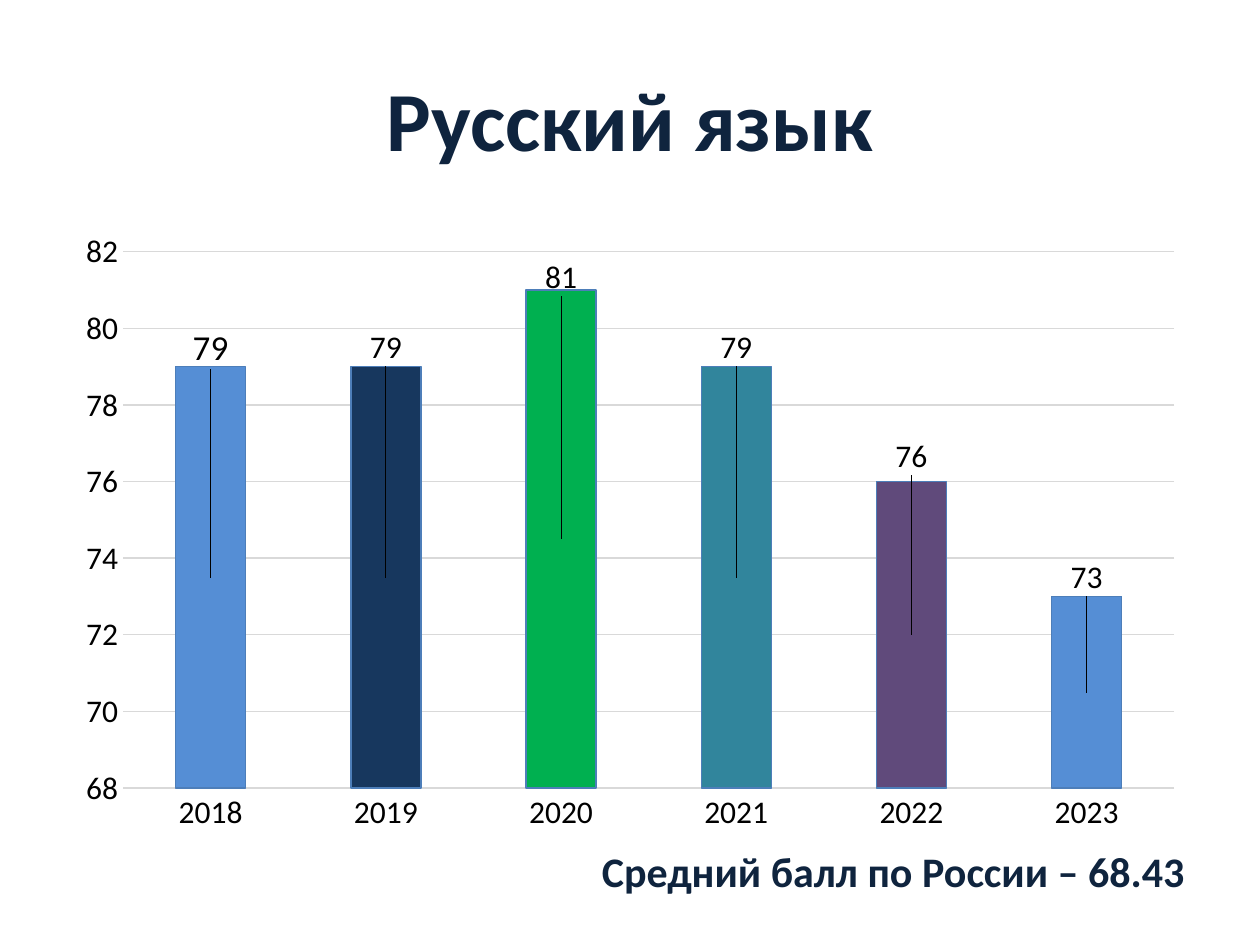
from lxml import etree
from pptx import Presentation, util as u
from pptx.chart.data import CategoryChartData
from pptx.dml.color import RGBColor
from pptx.enum import chart as ch, text
from pptx.oxml import ns

WIDTH, HEIGHT = 10, 7.5
FONT, NAVY, BLACK, GRID, OUTLINE = "Calibri", "0F243E", "000000", "D9D9D9", "4D7EB9"
AXIS_MIN, AXIS_MAX, AXIS_STEP = 68, 82, 2
PLOT = {"x": 0.053, "y": 0.05, "w": 0.927, "h": 0.86}

# year, score, bar colour, label size, gap above the bar as a share of the chart
RESULTS = [
    ("2018", 79, "558ED5", 20, 0.03),
    ("2019", 79, "17375E", 18, 0.03),
    ("2020", 81, "00B050", 18, 0.02),
    ("2021", 79, "31859C", 18, 0.03),
    ("2022", 76, "604A7B", 18, 0.04),
    ("2023", 73, "558ED5", 18, 0.03),
]


def rgb(value):
    return RGBColor.from_string(value)


def apply(target, values):
    for name, value in values.items():
        setattr(target, name, value)


def place(parent, index, values):
    """Give a chart part a manual layout, in shares of the chart."""
    for old in parent.findall(ns.qn("c:layout")):
        parent.remove(old)
    layout = etree.Element(ns.qn("c:layout"))
    manual = etree.SubElement(layout, ns.qn("c:manualLayout"))
    for name, value in values.items():
        etree.SubElement(manual, ns.qn(f"c:{name}"), val=str(value))
    parent.insert(index, layout)


class Deck:
    def __init__(self):
        self.prs = Presentation()
        self.prs.slide_width, self.prs.slide_height = u.Inches(WIDTH), u.Inches(HEIGHT)
        self.slide = self.prs.slides.add_slide(self.prs.slide_layouts[6])

    def box(self, left, top, width, height):
        """Turn shares of the slide into lengths."""
        return [u.Inches(share * side) for share, side in
                zip((left, top, width, height), (WIDTH, HEIGHT) * 2)]

    def font(self, font, size, color, bold=False):
        apply(font, {"name": FONT, "size": u.Pt(size), "bold": bold})
        font.color.rgb = rgb(color)

    def line(self, line, color):
        line.width = u.Pt(0.75)
        line.color.rgb = rgb(color)

    def caption(self, wording, area, size, align):
        frame = self.slide.shapes.add_textbox(*self.box(*area)).text_frame
        apply(frame, {"word_wrap": True, "vertical_anchor": text.MSO_ANCHOR.MIDDLE})
        paragraph = frame.paragraphs[0]
        paragraph.alignment = align
        run = paragraph.add_run()
        run.text = wording
        self.font(run.font, size, NAVY, True)

    def axes(self, chart):
        scores, years = chart.value_axis, chart.category_axis
        for axis in (scores, years):
            apply(axis, {"major_tick_mark": ch.XL_TICK_MARK.NONE,
                         "minor_tick_mark": ch.XL_TICK_MARK.NONE})
            self.font(axis.tick_labels.font, 18, BLACK)
        apply(scores, {"minimum_scale": AXIS_MIN, "maximum_scale": AXIS_MAX,
                       "major_unit": AXIS_STEP, "has_major_gridlines": True})
        self.line(scores.major_gridlines.format.line, GRID)
        scores.format.line.fill.background()
        self.line(years.format.line, GRID)

    def bar(self, point, score, color, size, gap):
        """Colour one bar and lift its label from the middle to above the top."""
        point.format.fill.solid()
        point.format.fill.fore_color.rgb = rgb(color)
        self.line(point.format.line, OUTLINE)
        label = point.data_label
        self.font(label.font, size, BLACK)
        label.position = ch.XL_LABEL_POSITION.CENTER
        half = (score - AXIS_MIN) / (AXIS_MAX - AXIS_MIN) * PLOT["h"] / 2
        entry = point.data_label.font._element.getparent()
        while entry.tag != ns.qn("c:dLbl"):
            entry = entry.getparent()
        place(entry, 1, {"x": 0, "y": round(-half - gap, 3)})

    def score_chart(self, area):
        data = CategoryChartData()
        data.categories = [result[0] for result in RESULTS]
        data.add_series("Series 1", [result[1] for result in RESULTS])
        chart = self.slide.shapes.add_chart(
            ch.XL_CHART_TYPE.COLUMN_STACKED, *self.box(*area), data).chart
        apply(chart, {"has_legend": False, "has_title": False})
        self.font(chart.font, 10, BLACK)
        self.axes(chart)
        plot = chart.plots[0]
        apply(plot, {"gap_width": 150, "overlap": 100, "vary_by_categories": False})
        for index, (_, *style) in enumerate(RESULTS):
            self.bar(plot.series[0].points[index], *style)
        place(chart._chartSpace.chart.plotArea, 0,
              {"layoutTarget": "inner", "xMode": "edge", "yMode": "edge", **PLOT})


def main():
    deck = Deck()
    deck.caption("Русский язык", (0.05, 0.04, 0.9, 0.17), 48, text.PP_ALIGN.CENTER)
    deck.score_chart((0.05, 1.75 / HEIGHT, 0.9, 0.66))
    deck.caption("Средний балл по России – 68.43", (0.075, 6.66 / HEIGHT, 0.875, 0.5 / HEIGHT),
                 24, text.PP_ALIGN.RIGHT)
    deck.prs.save("out.pptx")


if __name__ == "__main__":
    main()
